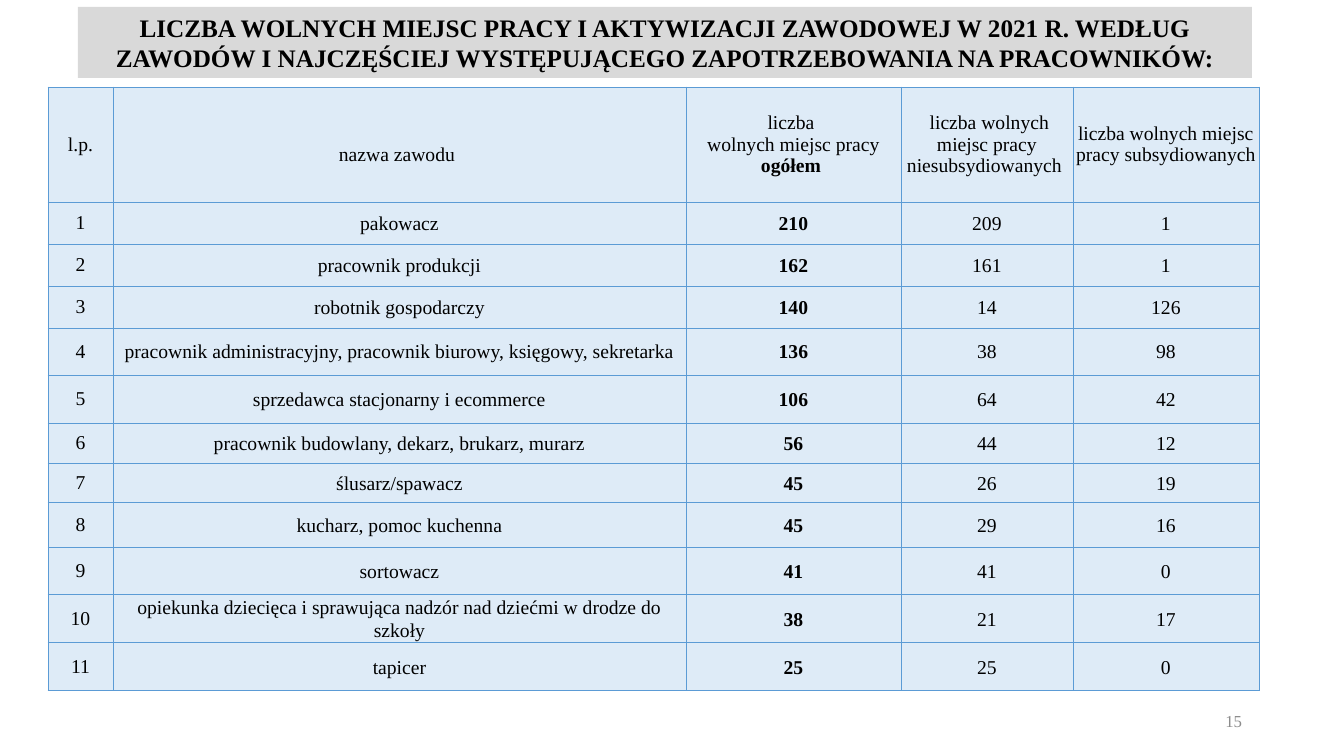
from lxml import etree
from pptx import Presentation, util as u
from pptx.dml.color import RGBColor
from pptx.enum import text as t
from pptx.oxml import ns

PX = 914400 / 100.8
COLORS = {"ink": "000000", "grey": "8C8C8C", "banner": "D9D9D9",
          "cell": "DEEBF7", "border": "5B9BD5"}


def px(length):
    return u.Emu(round(length * PX))


def color(name):
    return RGBColor.from_string(COLORS[name])


def write(para, content, size=14, bold=False, ink="ink", font="Times New Roman",
          align=t.PP_ALIGN.CENTER, spacing=1.0):
    para.alignment = align
    para.line_spacing = spacing
    span = para.add_run()
    span.text = content
    span.font.name = font
    span.font.size = u.Pt(size)
    span.font.bold = bold
    span.font.color.rgb = color(ink)


class Slide:
    def __init__(self, deck):
        self.page = deck.slides.add_slide(deck.slide_layouts[5])

    def place(self, box, left, top, width, height):
        box.left, box.top = px(left), px(top)
        box.width, box.height = px(width), px(height)

    def title(self, content, *area):
        box = self.page.shapes.title
        self.place(box, *area)
        box.fill.solid()
        box.fill.fore_color.rgb = color("banner")
        frame = box.text_frame
        frame.auto_size = t.MSO_AUTO_SIZE.NONE
        frame.vertical_anchor = t.MSO_ANCHOR.MIDDLE
        write(frame.paragraphs[0], content, size=18, bold=True)

    def label(self, content, left, top, width, height, **style):
        box = self.page.shapes.add_textbox(px(left), px(top), px(width), px(height))
        box.text_frame.word_wrap = True
        box.text_frame.vertical_anchor = t.MSO_ANCHOR.MIDDLE
        write(box.text_frame.paragraphs[0], content, **style)

    def table(self, left, top, widths, heights):
        frame = self.page.shapes.add_table(
            len(heights), len(widths), px(left), px(top), px(sum(widths)), px(sum(heights)))
        table = frame.table
        table.first_row = table.horz_banding = False
        for column, width in zip(table.columns, widths):
            column.width = px(width)
        for row, height in zip(table.rows, heights):
            row.height = px(height)
        return table

    def cell(self, cell, paras, margin=3, drop=0, spacing=1.0):
        """Fill a cell; paras is a list of lists of (text, bold)."""
        cell.fill.solid()
        cell.fill.fore_color.rgb = color("cell")
        cell.vertical_anchor = t.MSO_ANCHOR.MIDDLE
        cell.margin_left = cell.margin_right = px(margin)
        cell.margin_top, cell.margin_bottom = px(drop), 0
        frame = cell.text_frame
        for index, spans in enumerate(paras):
            para = frame.add_paragraph() if index else frame.paragraphs[0]
            for content, bold in spans:
                write(para, content, bold=bold, spacing=spacing)
        self.borders(cell)

    def borders(self, cell):
        properties = cell._tc.get_or_add_tcPr()
        for index, side in enumerate(("lnL", "lnR", "lnT", "lnB")):
            line = etree.Element(ns.qn("a:" + side), w=str(u.Pt(0.5)))
            fill = etree.SubElement(line, ns.qn("a:solidFill"))
            etree.SubElement(fill, ns.qn("a:srgbClr"), val=COLORS["border"])
            properties.insert(index, line)


HEADINGS = [
    [[("l.p.", False)]],
    [[("nazwa zawodu ", False)]],
    [[("liczba ", False)], [("wolnych miejsc pracy ", False), ("ogółem ", True)]],
    [[(" liczba wolnych miejsc pracy niesubsydiowanych ", False)]],
    [[("liczba wolnych miejsc pracy subsydiowanych ", False)]],
]
# Occupation, total, unsubsidised, subsidised
OCCUPATIONS = [
    ("pakowacz", 210, 209, 1),
    ("pracownik produkcji", 162, 161, 1),
    ("robotnik gospodarczy", 140, 14, 126),
    ("pracownik administracyjny, pracownik biurowy, księgowy, sekretarka", 136, 38, 98),
    ("sprzedawca stacjonarny i ecommerce", 106, 64, 42),
    ("pracownik budowlany, dekarz, brukarz, murarz", 56, 44, 12),
    ("ślusarz/spawacz", 45, 26, 19),
    ("kucharz, pomoc kuchenna", 45, 29, 16),
    ("sortowacz", 41, 41, 0),
    ("opiekunka dziecięca i sprawująca nadzór nad dziećmi w drodze do szkoły", 38, 21, 17),
    ("tapicer", 25, 25, 0),
]
WIDTHS = [65, 573, 215, 172, 186]
HEIGHTS = [115, 42, 42, 42, 47, 48, 40, 40, 45, 47, 48, 48]
NAME, TOTAL = 1, 2


def main():
    deck = Presentation()
    deck.slide_width, deck.slide_height = px(1344), px(756)
    slide = Slide(deck)

    # Title banner
    slide.title("LICZBA WOLNYCH MIEJSC PRACY I AKTYWIZACJI ZAWODOWEJ W 2021 R. WEDŁUG "
                "ZAWODÓW I NAJCZĘŚCIEJ WYSTĘPUJĄCEGO ZAPOTRZEBOWANIA NA PRACOWNIKÓW:",
                78, 7, 1174, 71)

    # Table heading
    table = slide.table(48, 87, WIDTHS, HEIGHTS)
    for column, paras in enumerate(HEADINGS):
        slide.cell(table.cell(0, column), paras, drop=21 if column == NAME else 0)

    # Table body
    for row, occupation in enumerate(OCCUPATIONS, 1):
        slide.cell(table.cell(row, 0), [[(str(row), False)]])
        for column, value in enumerate(occupation, NAME):
            slide.cell(table.cell(row, column), [[(str(value), column == TOTAL)]],
                       margin=4, spacing=1.07)

    # Page number
    slide.label("15", 950, 701, 302, 40, size=12, ink="grey", align=t.PP_ALIGN.RIGHT)

    deck.save("out.pptx")


if __name__ == "__main__":
    main()
